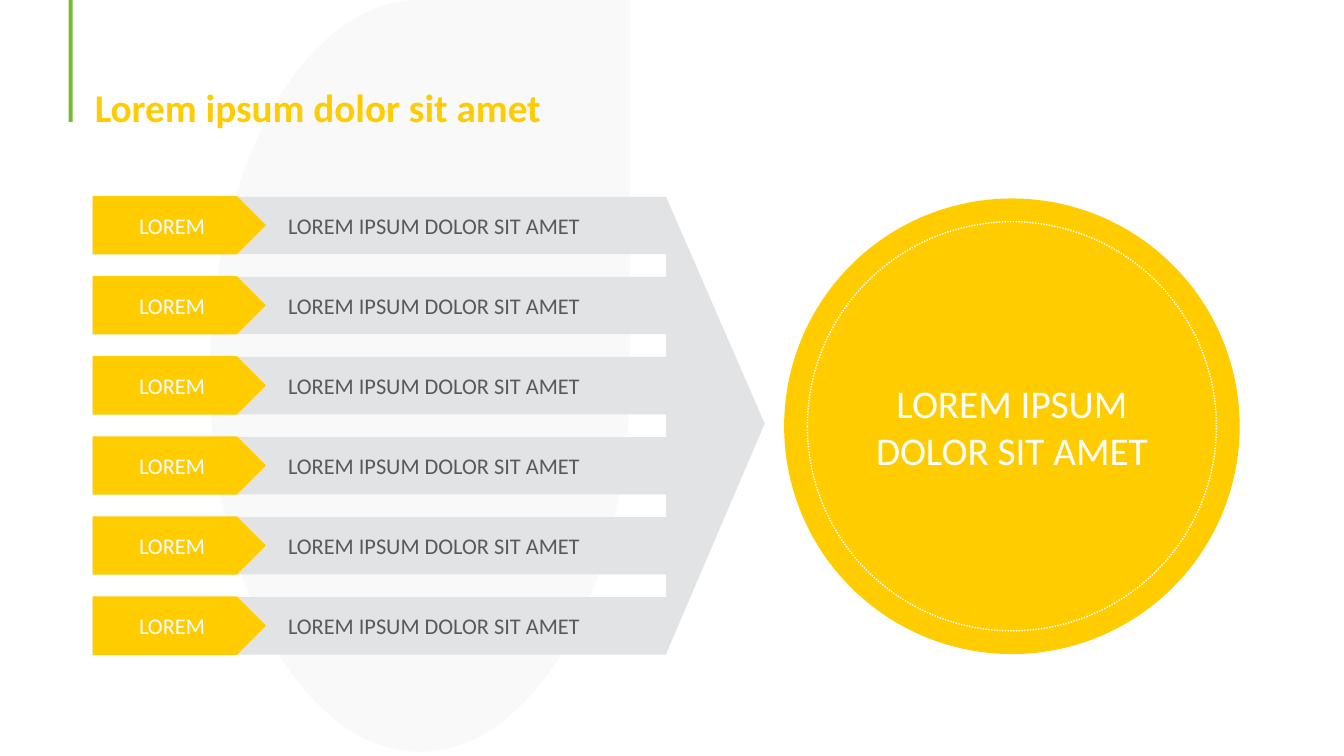
from dataclasses import dataclass

from lxml import etree
from pptx import Presentation
from pptx.dml.color import RGBColor
from pptx.enum.dml import MSO_LINE
from pptx.enum.shapes import MSO_SHAPE
from pptx.enum.text import MSO_ANCHOR, PP_ALIGN
from pptx.oxml.ns import qn
from pptx.util import Pt

RECTANGLE = MSO_SHAPE.RECTANGLE
PENTAGON = MSO_SHAPE.PENTAGON
TRIANGLE = MSO_SHAPE.ISOSCELES_TRIANGLE
OVAL = MSO_SHAPE.OVAL
TEARDROP = MSO_SHAPE.TEAR
ROUND_DOT = MSO_LINE.ROUND_DOT
MIDDLE = MSO_ANCHOR.MIDDLE
BOTTOM = MSO_ANCHOR.BOTTOM
CENTER = PP_ALIGN.CENTER
LEFT = PP_ALIGN.LEFT
TITLE_ONLY = 5


@dataclass(frozen=True)
class Theme:
    font: str = "Calibri"
    title: str = "FFCC01"
    accent: str = "FFCC00"
    stripe: str = "78BB32"
    bar: str = "E2E3E4"
    backdrop: str = "E1E2E4"
    label: str = "58595B"
    white: str = "FFFFFF"
    heading_size: int = 28
    label_size: int = 16


class SlideBuilder:
    """Draws styled elements on one slide; boxes are left, top, width, height in points."""

    def __init__(self, slide, theme):
        self.slide = slide
        self.theme = theme

    def title(self, text, box):
        shape = self.slide.shapes.title
        shape.element.getparent().append(shape.element)
        shape.left, shape.top, shape.width, shape.height = map(Pt, box)
        self.set_text(shape, text, self.theme.heading_size, self.theme.title, LEFT)
        shape.text_frame.vertical_anchor = BOTTOM
        paragraph = shape.text_frame.paragraphs[0]
        paragraph.line_spacing = 0.9
        paragraph.runs[0].font.bold = True

    def shape(self, kind, box, fill=None, parent=None):
        shapes = (parent or self.slide).shapes
        shape = shapes.add_shape(kind, *map(Pt, box))
        shape.shadow.inherit = False
        shape.line.fill.background()
        if fill:
            shape.fill.solid()
            shape.fill.fore_color.rgb = RGBColor.from_string(fill)
        else:
            shape.fill.background()
        return shape

    def backdrop(self, kind, box, opacity):
        shape = self.shape(kind, box, self.theme.backdrop)
        color = shape.element.spPr.find(".//" + qn("a:srgbClr"))
        etree.SubElement(color, qn("a:alpha"), val=str(opacity * 1000))

    def label(self, kind, box, fill, text, color, left_inset):
        """Adds a filled shape with one unwrapped line of text."""
        shape = self.shape(kind, box, fill)
        self.set_text(shape, text, self.theme.label_size, color)
        self.set_insets(shape, left_inset, 7.2)
        shape.text_frame.word_wrap = False

    def arrow_head(self, box, tip):
        """Adds a triangle that points right; box is its size after turning."""
        left, top, width, height = box
        shift = (height - width) / 2
        shape = self.shape(TRIANGLE, (left - shift, top + shift, height, width), self.theme.bar)
        shape.rotation = 90
        shape.adjustments[0] = tip

    def badge(self, box, text, margin):
        """Adds a disc with a dotted ring inside it, as one group."""
        left, top, width, height = box
        group = self.slide.shapes.add_group_shape()
        disc = self.shape(OVAL, box, self.theme.accent, group)
        self.set_text(disc, text, self.theme.heading_size, self.theme.white)
        self.set_insets(disc, 0, 0)
        disc.text_frame.word_wrap = True
        ring_box = (left + margin, top + margin, width - 2 * margin, height - 2 * margin)
        ring = self.shape(OVAL, ring_box, parent=group)
        ring.line.color.rgb = RGBColor.from_string(self.theme.white)
        ring.line.width = Pt(1)
        ring.line.dash_style = ROUND_DOT

    def set_text(self, shape, text, size, color, alignment=CENTER):
        frame = shape.text_frame
        frame.text = text
        frame.vertical_anchor = MIDDLE
        paragraph = frame.paragraphs[0]
        paragraph.alignment = alignment
        font = paragraph.runs[0].font
        font.name = self.theme.font
        font.size = Pt(size)
        font.color.rgb = RGBColor.from_string(color)

    def set_insets(self, shape, left, right):
        frame = shape.text_frame
        frame.margin_left, frame.margin_right = Pt(left), Pt(right)
        frame.margin_top = frame.margin_bottom = 0


def main():
    presentation = Presentation()
    presentation.slide_width, presentation.slide_height = Pt(960), Pt(540)
    slide = presentation.slides.add_slide(presentation.slide_layouts[TITLE_ONLY])
    theme = Theme()
    builder = SlideBuilder(slide, theme)

    builder.shape(RECTANGLE, (49, 0, 2.9, 87.1), theme.stripe)
    builder.backdrop(TEARDROP, (150, 0, 300, 537), opacity=20)
    builder.title("Lorem ipsum dolor sit amet", (60.5, 29.5, 862.5, 67.7))

    row_left, first_top, row_pitch, row_count = 66.2, 140, 57.2, 6
    row_tops = [first_top + row * row_pitch for row in range(row_count)]
    for top in row_tops:
        builder.label(RECTANGLE, (row_left, top + 0.6, 409.7, 41), theme.bar,
                      "LOREM IPSUM DOLOR SIT AMET", theme.label, 85)
    builder.arrow_head((475.6, 140.2, 70.6, 327.4), tip=0.496)
    for top in row_tops:
        builder.label(PENTAGON, (row_left, top, 123.8, 41.7), theme.accent,
                      "LOREM", theme.white, 7.2)

    builder.badge((560.1, 141.8, 325.4, 325.4), "LOREM IPSUM DOLOR SIT AMET", margin=16.6)
    presentation.save("out.pptx")


if __name__ == "__main__":
    main()
